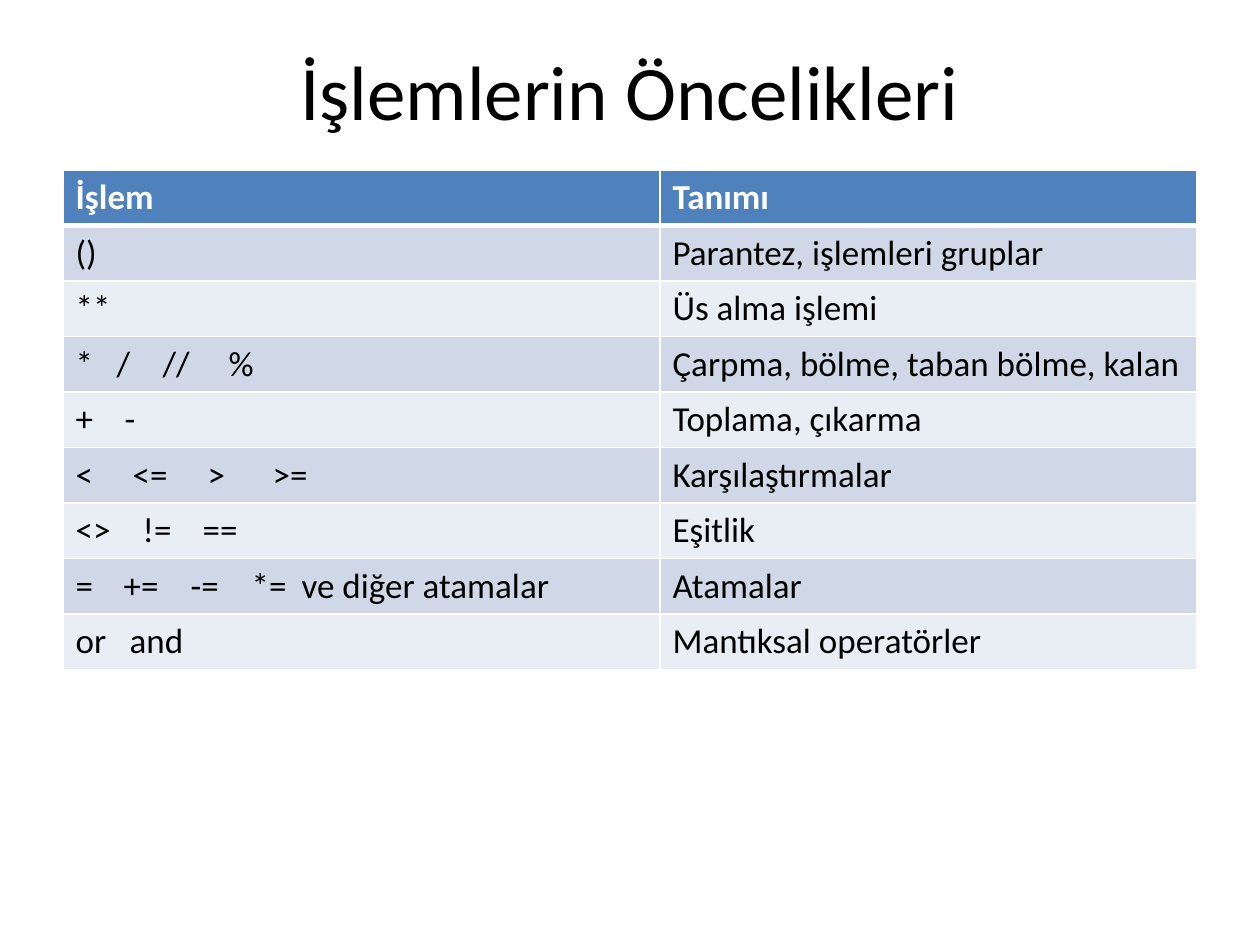
from lxml import etree
from pptx import Presentation, util as u
from pptx.dml.color import RGBColor
from pptx.enum import text
from pptx.oxml.ns import qn

EMU_PER_PX = 914400 / 126

# Symbols of each row, the tab stops between them (px), and the description
OPERATIONS = [
    (["()"], [], "Parantez, işlemleri gruplar"),
    (["**"], [], "Üs alma işlemi"),
    (["*", "/", "//", "%"], [41, 87, 153], "Çarpma, bölme, taban bölme, kalan"),
    (["+", "-"], [49], "Toplama, çıkarma"),
    (["<", "<=", ">", ">="], [57, 132, 197], "Karşılaştırmalar"),
    (["<>", "!=", "=="], [67, 127], "Eşitlik"),
    (["=", "+=", "-=", "*=", "ve diğer atamalar"], [48, 115, 176, 226], "Atamalar"),
    (["or", "and"], [54], "Mantıksal operatörler"),
]


def px(length):
    return u.Emu(round(length * EMU_PER_PX))


def color(value):
    return RGBColor.from_string(value)


def write(frame, words, size=20, ink="000000", bold=False, font="Calibri",
          align=text.PP_ALIGN.LEFT, tabs=()):
    para = frame.paragraphs[0]
    para.alignment = align
    span = para.add_run()
    span.text = words
    span.font.name = font
    span.font.size = u.Pt(size)
    span.font.bold = bold
    span.font.color.rgb = color(ink)
    if tabs:
        stops = etree.SubElement(para._p.get_or_add_pPr(), qn("a:tabLst"))
        for stop in tabs:
            etree.SubElement(stops, qn("a:tab"), pos=str(px(stop)), algn="l")


class SlideBuilder:
    header_fill = "4F81BD"
    band_fills = ["D0D8E8", "E9EDF4"]
    white = "FFFFFF"

    def __init__(self, deck):
        self.page = deck.slides.add_slide(deck.slide_layouts[5])

    def title(self, words, left, top, width, height):
        box = self.page.shapes.title
        box.left, box.top, box.width, box.height = map(px, (left, top, width, height))
        box.text_frame.vertical_anchor = text.MSO_ANCHOR.MIDDLE
        write(box.text_frame, words, size=44, align=text.PP_ALIGN.CENTER)

    def borders(self, cell, **widths):
        properties = cell._tc.get_or_add_tcPr()
        for side in "LRTB":
            line = etree.SubElement(properties, qn(f"a:ln{side}"),
                                    w=str(u.Pt(widths.get(side, 1))))
            fill = etree.SubElement(line, qn("a:solidFill"))
            etree.SubElement(fill, qn("a:srgbClr"), val=self.white)

    def cell(self, cell, words, fill, rules, **style):
        self.borders(cell, **rules)
        cell.fill.solid()
        cell.fill.fore_color.rgb = color(fill)
        write(cell.text_frame, words, **style)

    def table(self, headings, rows, left, top, columns, row_height):
        count = len(rows) + 1
        grid = self.page.shapes.add_table(
            count, len(columns), px(left), px(top),
            px(sum(columns)), px(row_height * count)).table
        for column, width in zip(grid.columns, columns):
            column.width = px(width)

        # Header row, with a thicker rule below it
        for index, heading in enumerate(headings):
            self.cell(grid.cell(0, index), heading, self.header_fill, {"B": 3},
                      ink=self.white, bold=True)

        # Banded body rows
        for number, (symbols, tabs, description) in enumerate(rows, 1):
            fill = self.band_fills[(number - 1) % 2]
            rules = {"T": 3} if number == 1 else {}
            self.cell(grid.cell(number, 0), "\t".join(symbols), fill, rules, tabs=tabs)
            self.cell(grid.cell(number, 1), description, fill, rules)


def main():
    deck = Presentation()
    deck.slide_width, deck.slide_height = px(1260), px(945)
    slide = SlideBuilder(deck)
    slide.title("İşlemlerin Öncelikleri", 63, 11, 1134, 158)
    slide.table(["İşlem", "Tanımı"], OPERATIONS, 63, 170,
                columns=[597, 537], row_height=52)
    deck.save("out.pptx")


if __name__ == "__main__":
    main()
